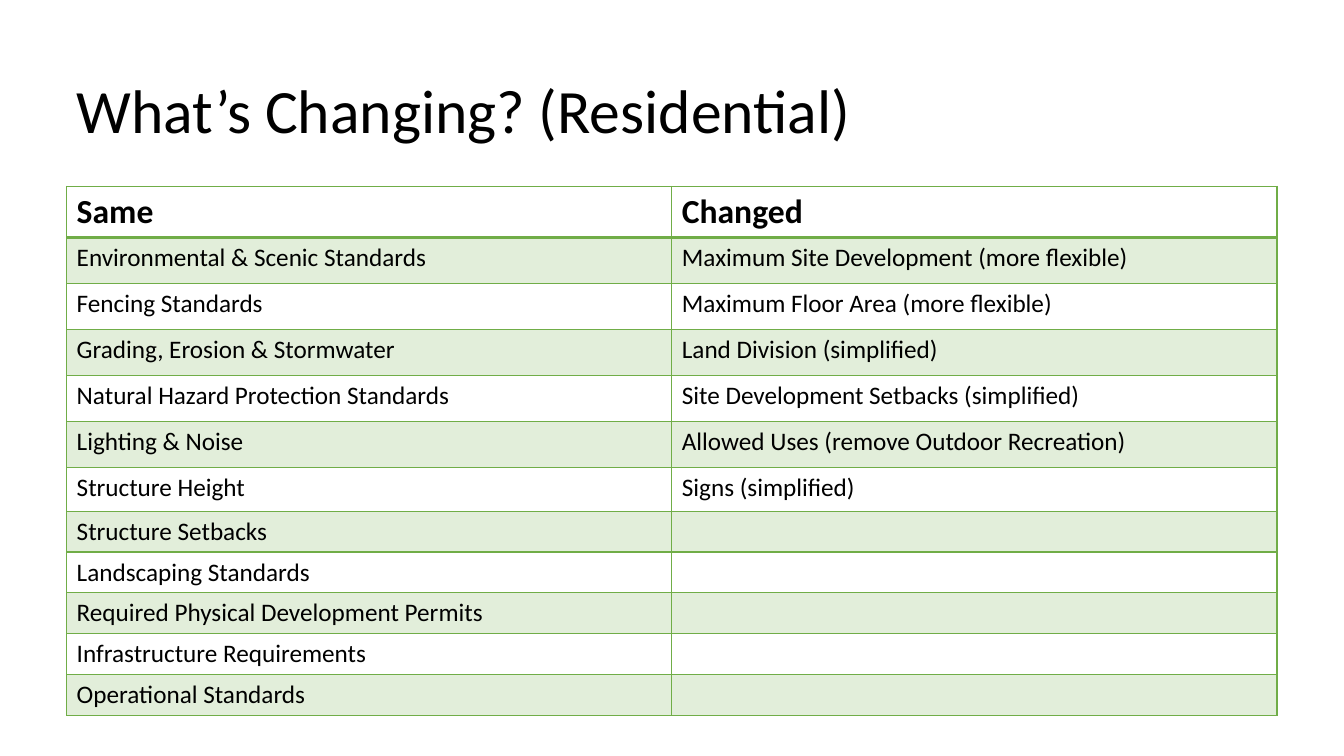
from lxml.etree import SubElement
from pptx import Presentation
from pptx.dml.color import RGBColor
from pptx.enum.text import MSO_ANCHOR, PP_ALIGN
from pptx.oxml import parse_xml
from pptx.oxml.ns import nsdecls, qn
from pptx.util import Cm, Pt

TITLE = "What’s Changing? (Residential)"
HEADINGS = ("Same", "Changed")
SAME = [
    "Environmental & Scenic Standards",
    "Fencing Standards",
    "Grading, Erosion & Stormwater",
    "Natural Hazard Protection Standards",
    "Lighting & Noise",
    "Structure Height",
    "Structure Setbacks",
    "Landscaping Standards",
    "Required Physical Development Permits",
    "Infrastructure Requirements",
    "Operational Standards",
]
CHANGED = [
    "Maximum Site Development (more flexible)",
    "Maximum Floor Area (more flexible)",
    "Land Division (simplified)",
    "Site Development Setbacks (simplified)",
    "Allowed Uses (remove Outdoor Recreation)",
    "Signs (simplified)",
]
COLORS = {"text": "000000", "green": "70AD47"}
FONT = "Calibri"
BAND_OPACITY = 20
LEFT, TABLE_TOP, COLUMN_WIDTH = 1.68, 4.7, 15.25
ROW_HEIGHTS = [1.29] + [1.16] * 5 + [1.09] + [1.03] * 5


def style_text(para, size, bold=False):
    para.font.name = FONT
    para.font.size = Pt(size)
    para.font.bold = bold
    para.font.color.rgb = RGBColor.from_string(COLORS["text"])


def fill_band(cell):
    cell.fill.solid()
    cell.fill.fore_color.rgb = RGBColor.from_string(COLORS["green"])
    color = next(cell._tc.tcPr.iter(qn("a:srgbClr")))
    SubElement(color, qn("a:alpha"), val=str(BAND_OPACITY * 1000))


def add_borders(cell, widths):
    properties = cell._tc.get_or_add_tcPr()
    for index, (side, width) in enumerate(widths.items()):
        properties.insert(index, parse_xml(
            f'<a:ln{side} {nsdecls("a")} w="{Pt(width)}"><a:solidFill>'
            f'<a:srgbClr val="{COLORS["green"]}"/></a:solidFill></a:ln{side}>'))


def add_title(page):
    title = page.shapes.title
    title.left, title.top = Cm(LEFT), Cm(1.02)
    title.width, title.height = Cm(29.21), Cm(3.68)
    title.text_frame.text = TITLE
    title.text_frame.vertical_anchor = MSO_ANCHOR.MIDDLE
    para = title.text_frame.paragraphs[0]
    para.alignment = PP_ALIGN.LEFT
    para.line_spacing = 0.9
    style_text(para, 44)


def add_standards_table(page):
    padded = CHANGED + [""] * (len(SAME) - len(CHANGED))
    rows = [HEADINGS, *zip(SAME, padded)]
    table = page.shapes.add_table(
        len(rows), len(HEADINGS), Cm(LEFT), Cm(TABLE_TOP),
        Cm(COLUMN_WIDTH * len(HEADINGS)), Cm(sum(ROW_HEIGHTS))).table
    table.first_row = False
    table.horz_banding = False
    for column in table.columns:
        column.width = Cm(COLUMN_WIDTH)
    for row_index, (values, height) in enumerate(zip(rows, ROW_HEIGHTS)):
        table.rows[row_index].height = Cm(height)
        is_header = row_index == 0
        for column_index, value in enumerate(values):
            cell = table.cell(row_index, column_index)
            if value:
                cell.text = value
            style_text(cell.text_frame.paragraphs[0], 24 if is_header else 18, is_header)
            if row_index % 2:
                fill_band(cell)
            else:
                cell.fill.background()
            add_borders(cell, {"L": 1, "R": 1, "T": 2 if row_index == 1 else 1,
                               "B": 2 if is_header else 1})


def main():
    deck = Presentation()
    deck.slide_width, deck.slide_height = Cm(33.87), Cm(19.05)
    page = deck.slides.add_slide(deck.slide_layouts[5])
    add_title(page)
    add_standards_table(page)
    deck.save("out.pptx")


if __name__ == "__main__":
    main()
